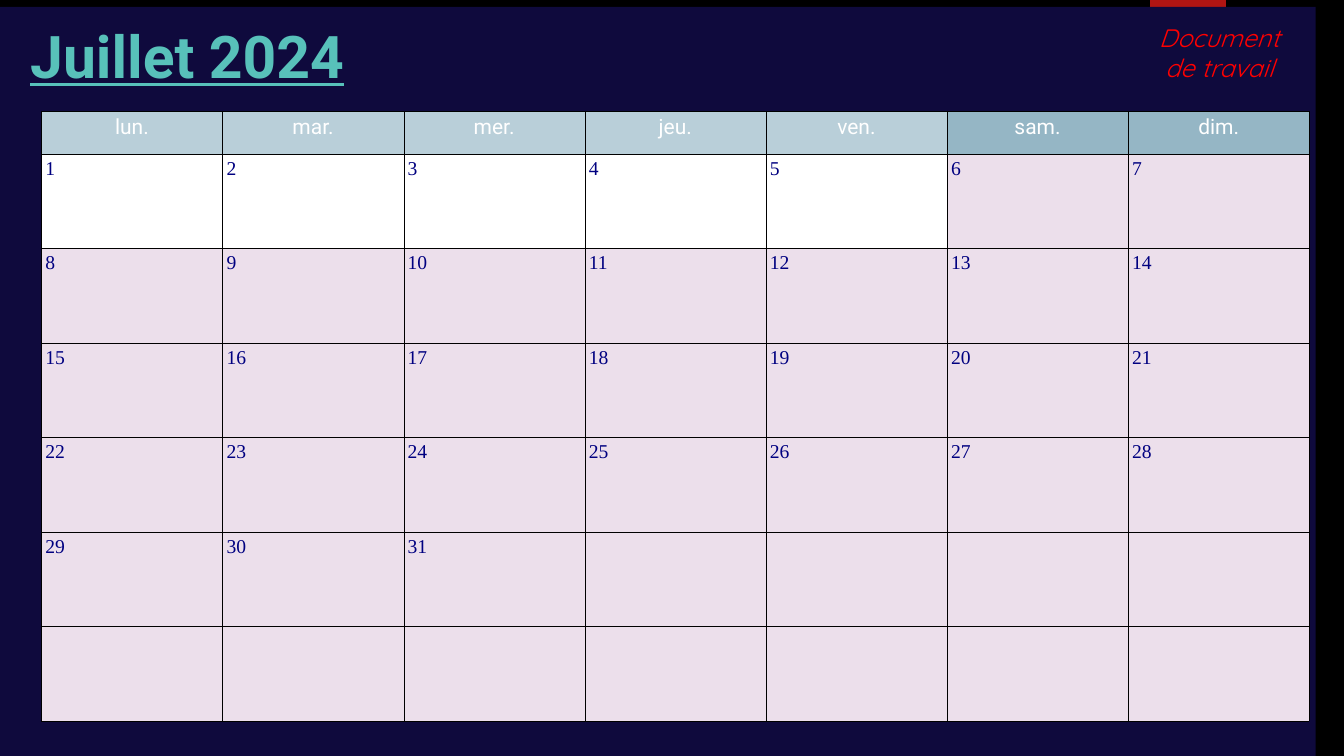
from dataclasses import dataclass

from lxml import etree
from pptx import Presentation
from pptx.dml.color import RGBColor
from pptx.enum.shapes import MSO_SHAPE
from pptx.enum.text import MSO_ANCHOR, MSO_AUTO_SIZE, PP_ALIGN
from pptx.oxml.ns import qn
from pptx.slide import Slide
from pptx.table import _Cell
from pptx.text.text import TextFrame
from pptx.util import Emu, Inches, Pt

LEFT, CENTER = PP_ALIGN.LEFT, PP_ALIGN.CENTER
TOP = MSO_ANCHOR.TOP
FIXED_SIZE = MSO_AUTO_SIZE.NONE
RECTANGLE = MSO_SHAPE.RECTANGLE
TITLE_ONLY = 5

SLIDE_WIDTH, SLIDE_HEIGHT = Inches(13.333), Inches(7.5)
WEEKDAYS = ("lun.", "mar.", "mer.", "jeu.", "ven.", "sam.", "dim.")
WEEKS, LAST_DAY, FIRST_SATURDAY = 6, 31, 6
WEEKEND_COLUMN = 5


@dataclass(frozen=True)
class Theme:
    black: str = "000000"
    panel: str = "0F0A3D"
    tab: str = "B01513"
    title: str = "58C1BA"
    note: str = "FF0000"
    header_text: str = "FFFFFF"
    weekday: str = "B9CFD9"
    weekend: str = "95B6C5"
    day_text: str = "000080"
    school_day: str = "FFFFFF"
    holiday: str = "ECDFEB"
    heading_font: str = "Roboto"
    day_font: str = "Times New Roman"
    note_font: str = "Quicksand"
    title_size: float = 42
    note_size: float = 18
    header_size: float = 15
    day_size: float = 14
    border_width: float = 0.25
    cell_margin: float = 0.04


THEME = Theme()


@dataclass(frozen=True)
class Area:
    """A rectangle in percent of the slide's width and height."""
    left: float
    top: float
    width: float
    height: float

    def lengths(self) -> tuple[Emu, Emu, Emu, Emu]:
        return (Emu(round(SLIDE_WIDTH * self.left / 100)),
                Emu(round(SLIDE_HEIGHT * self.top / 100)),
                Emu(round(SLIDE_WIDTH * self.width / 100)),
                Emu(round(SLIDE_HEIGHT * self.height / 100)))


@dataclass(frozen=True)
class Block:
    area: Area
    color: str


BLOCKS = (
    Block(Area(85.58, 0, 5.63, 16.67), THEME.tab),
    Block(Area(-2.1, 0.93, 100, 100), THEME.panel),
)
CALENDAR_AREA = Area(3.08, 14.7, 94.35, 80.67)
HEADER_SHARE = 0.07
TITLE_AREA = Area(1.5, 2, 77.18, 20.4)
NOTE_AREA = Area(84.53, 2.27, 12.38, 9.47)


def write_text(frame: TextFrame, text: str, *, font: str, size: float, color: str,
               align: PP_ALIGN = LEFT, bold: bool = False, italic: bool = False,
               underline: bool = False) -> None:
    para = frame.paragraphs[0]
    para.alignment = align
    span = para.add_run()
    span.text = text
    span.font.name = font
    span.font.size = Pt(size)
    span.font.color.rgb = RGBColor.from_string(color)
    span.font.bold, span.font.italic, span.font.underline = bold, italic, underline


def add_block(page: Slide, block: Block) -> None:
    box = page.shapes.add_shape(RECTANGLE, *block.area.lengths())
    box.shadow.inherit = False
    box.fill.solid()
    box.fill.fore_color.rgb = RGBColor.from_string(block.color)
    box.line.fill.background()


def format_cell(cell: _Cell, color: str) -> None:
    """Set the fill, margins and four borders of a cell."""
    margin = Inches(THEME.cell_margin)
    cell.margin_left = cell.margin_right = margin
    cell.margin_top = cell.margin_bottom = margin
    cell.fill.solid()
    cell.fill.fore_color.rgb = RGBColor.from_string(color)
    properties = cell._tc.get_or_add_tcPr()
    for position, side in enumerate(("a:lnL", "a:lnR", "a:lnT", "a:lnB")):
        border = etree.Element(qn(side), w=str(Pt(THEME.border_width)))
        paint = etree.SubElement(border, qn("a:solidFill"))
        etree.SubElement(paint, qn("a:srgbClr"), val=THEME.black)
        properties.insert(position, border)


def add_calendar(page: Slide) -> None:
    left, top, width, height = CALENDAR_AREA.lengths()
    table = page.shapes.add_table(WEEKS + 1, len(WEEKDAYS), left, top, width, height).table
    table.first_row = table.horz_banding = False
    for column in table.columns:
        column.width = Emu(width // len(WEEKDAYS))
    header_height = round(height * HEADER_SHARE)
    for row in table.rows:
        row.height = Emu((height - header_height) // WEEKS)
    table.rows[0].height = Emu(header_height)

    for column, name in enumerate(WEEKDAYS):
        header = table.cell(0, column)
        format_cell(header, THEME.weekend if column >= WEEKEND_COLUMN else THEME.weekday)
        write_text(header.text_frame, name, font=THEME.heading_font,
                   size=THEME.header_size, color=THEME.header_text, align=CENTER)
    for index in range(WEEKS * len(WEEKDAYS)):
        week, column = divmod(index, len(WEEKDAYS))
        day = index + 1
        cell = table.cell(week + 1, column)
        format_cell(cell, THEME.school_day if day < FIRST_SATURDAY else THEME.holiday)
        if day <= LAST_DAY:
            write_text(cell.text_frame, str(day), font=THEME.day_font,
                       size=THEME.day_size, color=THEME.day_text)


def place_title(page: Slide) -> None:
    """Format the title placeholder and bring it in front of the panel."""
    title = page.shapes.title
    title.left, title.top, title.width, title.height = TITLE_AREA.lengths()
    frame = title.text_frame
    frame.vertical_anchor = TOP
    frame.auto_size = FIXED_SIZE
    write_text(frame, "Juillet 2024", font=THEME.heading_font, size=THEME.title_size,
               color=THEME.title, bold=True, underline=True)
    title.element.getparent().append(title.element)


def add_note(page: Slide) -> None:
    frame = page.shapes.add_textbox(*NOTE_AREA.lengths()).text_frame
    frame.word_wrap = True
    write_text(frame, "Document de travail", font=THEME.note_font, size=THEME.note_size,
               color=THEME.note, align=CENTER, italic=True)


def main() -> None:
    deck = Presentation()
    deck.slide_width, deck.slide_height = SLIDE_WIDTH, SLIDE_HEIGHT
    page = deck.slides.add_slide(deck.slide_layouts[TITLE_ONLY])
    page.background.fill.solid()
    page.background.fill.fore_color.rgb = RGBColor.from_string(THEME.black)
    for block in BLOCKS:
        add_block(page, block)
    add_calendar(page)
    place_title(page)
    add_note(page)
    deck.save("out.pptx")


if __name__ == "__main__":
    main()
